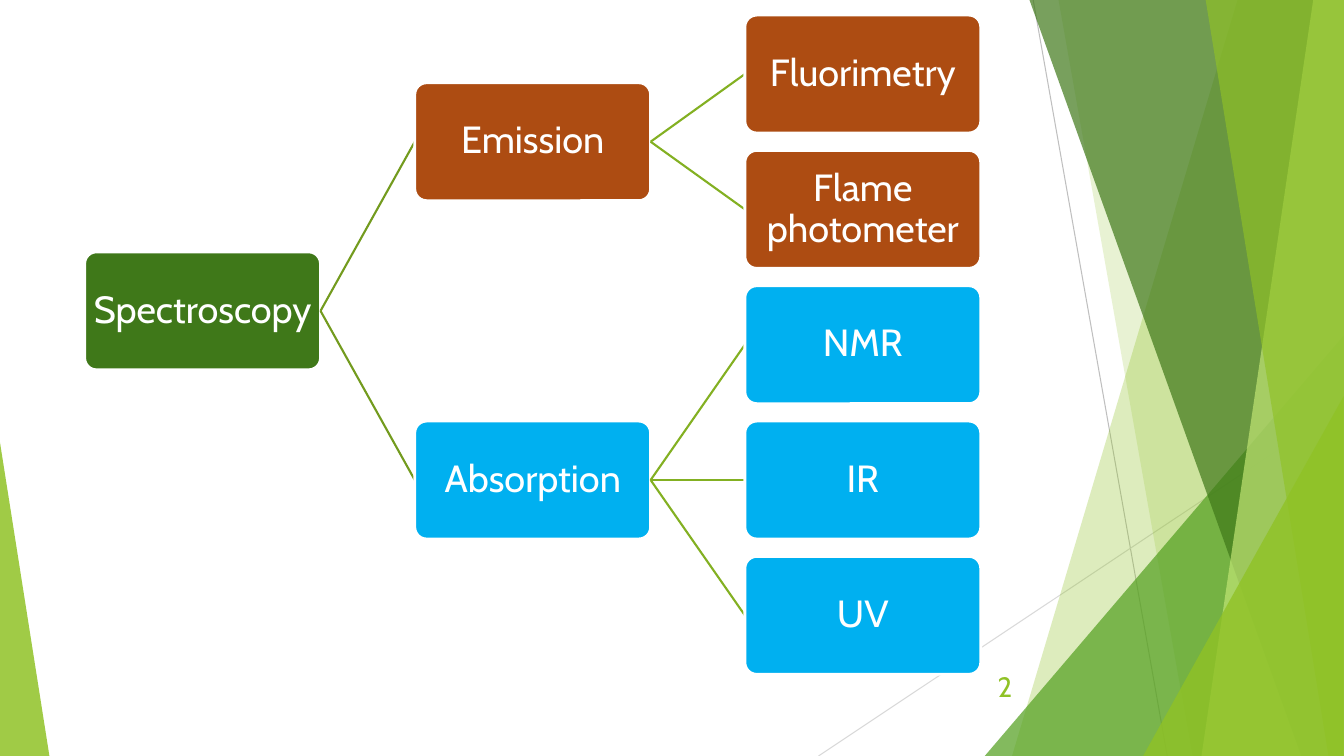
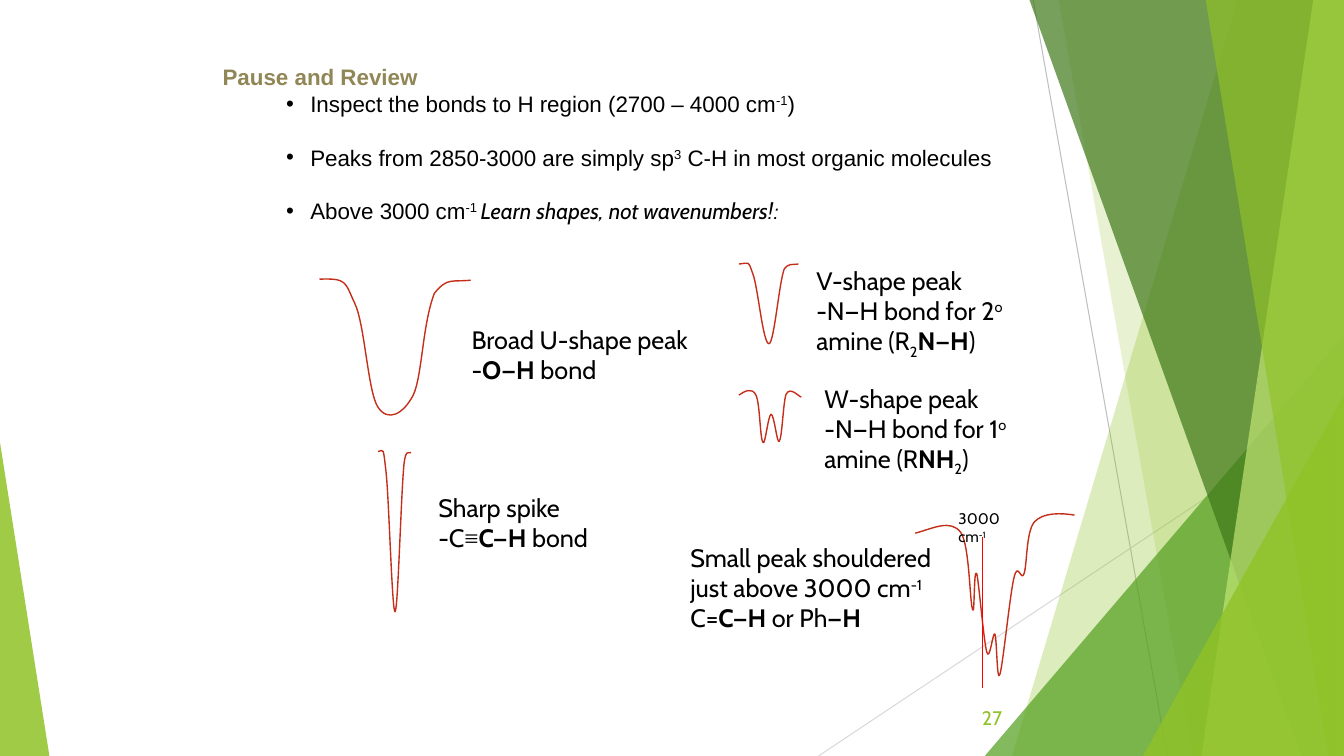
import pptx
import pptx.dml.color
import pptx.enum.shapes
import pptx.enum.text
import pptx.oxml.ns
import pptx.util
from lxml import etree

PX = 9144  # EMU per px, 100 px to the inch
SLIDE_H = 750
SLIDE_W = SLIDE_H * 16 / 9

GREEN, DARK_GREEN, MID_GREEN, PALE_GREEN = "90C226", "3F7819", "54A021", "C0E474"
RUST, BLUE, WHITE, BLACK, RED = "AD4C12", "00B0F0", "FFFFFF", "000000", "FF0000"
OLIVE, PEAK_RED = "918655", "C42F1A"
BRANCH_COLOURS = ["739B1E", "83B022"]

SHAPES = pptx.enum.shapes.MSO_SHAPE
ALIGN = pptx.enum.text.PP_ALIGN
ANCHOR = pptx.enum.text.MSO_ANCHOR

# Backdrop shared by both slides
HAIRLINES = [((1025, 0), (1158, 750), "BFBFBF"), ((1333, 403), (812, 750), "D9D9D9")]
# bands: x of top left and bottom left corner, both running to the right edge
FACETS = [
    ("band", (1228, 1004), GREEN, 30),
    ("band", (1050, 1183), GREEN, 20),
    ("corner", (977, 333, 356, 417, 1), MID_GREEN, 72),
    ("band", (1021, 1291), DARK_GREEN, 70),
    ("band", (1303, 1192), PALE_GREEN, 70),
    ("band", (1196, 1318), GREEN, 65),
    ("corner", (1134, 393, 199, 357, 1), GREEN, 80),
    ("corner", (0, 439, 49, 311, 0), GREEN, 85),
]

# Slide 1: name, colour, children
METHODS = ("Spectroscopy", DARK_GREEN, [
    ("Emission", RUST, [
        ("Fluorimetry", RUST, []),
        ("Flame photometer", RUST, [])]),
    ("Absorption", BLUE, [
        ("NMR", BLUE, []),
        ("IR", BLUE, []),
        ("UV", BLUE, [])]),
])
NODE_W, NODE_H = 234, 117
FIRST_COLUMN, LAST_COLUMN, COLUMNS = 84, 739, 3
FIRST_ROW, LAST_ROW, ROWS = 15, 552, 5

# Slide 2
SUP, SUB, BOLD = {"base": 30}, {"base": -25}, {"bold": True}
REVIEW_TITLE = "Pause and Review"
REVIEW_POINTS = [
    ["Inspect the bonds to H region (2700 – 4000 cm", ("-1", SUP), ")"],
    ["Peaks from 2850-3000 are simply sp", ("3", SUP), " C-H in most organic molecules"],
    ["Above 3000 cm", ("-1 ", SUP),
     ("Learn shapes, not wavenumbers!", {"font": "Cabin", "italic": True}),
     (":", {"size": 14, "italic": True})],
]
PEAK_LABELS = [
    ((458, 317, 246, 71), 18, [["Broad U-shape peak"], ["-", ("O—H", BOLD), " bond"]]),
    ((800, 258, 258, 101), 18, [
        ["V-shape peak"],
        ["-N—H bond for 2", ("o", SUP), " amine (R", ("2", SUB), ("N—H", BOLD), ")"]]),
    ((425, 483, 173, 71), 18, [
        ["Sharp spike"],
        ["-C", ("≡", {"font": "Times New Roman"}), ("C—H", BOLD), " bond"]]),
    ((808, 375, 258, 101), 18, [
        ["W-shape peak"],
        ["-N—H bond for 1", ("o", SUP), " amine (R", ("NH", BOLD), ("2", SUB), ")"]]),
    ((941, 500, 88, 29), 11, [["3000 cm", ("-1", SUP)]]),
    ((675, 533, 275, 101), 18, [
        ["Small peak shouldered just above 3000 cm", ("-1", SUP),
         " C=", ("C—H", BOLD), " or Ph", ("—H", BOLD)]]),
]
# Each peak: start point, then cubic curves (two controls and an end)
PEAKS = [
    [(317, 277),
     (345, 276), (342, 280), (352, 301), (362, 322), (365, 389), (375, 404),
     (385, 419), (400, 411), (410, 392), (419, 373), (419, 322), (431, 291),
     (444, 275), (448, 280), (467, 278)],
    [(733, 262),
     (744, 261), (742, 258), (747, 272), (752, 285), (757, 342), (763, 341),
     (768, 340), (773, 280), (778, 267), (783, 261), (784, 263), (792, 262)],
    [(375, 448),
     (381, 447), (380, 442), (383, 468), (386, 495), (389, 608), (392, 607),
     (395, 605), (398, 486), (401, 459), (403, 446), (404, 450), (408, 449)],
    [(733, 392),
     (739, 388), (746, 384), (750, 392), (754, 400), (754, 436), (757, 439),
     (759, 443), (762, 412), (765, 411), (768, 411), (771, 441), (773, 438),
     (776, 435), (777, 398), (780, 391), (784, 383), (793, 394), (795, 394)],
    [(908, 529),
     (926, 524), (943, 515), (953, 528), (962, 540), (962, 598), (965, 605),
     (967, 612), (966, 562), (969, 569), (971, 576), (976, 637), (979, 647),
     (982, 657), (985, 626), (987, 629), (989, 633), (989, 679), (992, 669),
     (995, 660), (1002, 589), (1006, 573), (1010, 556), (1013, 578), (1016, 569),
     (1019, 560), (1018, 528), (1026, 518), (1035, 508), (1053, 509), (1066, 511)],
]
MARKER = ((975, 683), (975, 533))


def emu(*lengths):
    return [pptx.util.Emu(round(length * PX)) for length in lengths]


def colour(value):
    return pptx.dml.color.RGBColor.from_string(value)


def paint(shape, fill=None, opacity=100, line=None, width=1):
    """Set fill and outline, without a shadow."""
    shape.shadow.inherit = False
    if fill:
        shape.fill.solid()
        shape.fill.fore_color.rgb = colour(fill)
        if opacity < 100:
            tint = shape._element.spPr.find(".//" + pptx.oxml.ns.qn("a:srgbClr"))
            alpha = etree.SubElement(tint, pptx.oxml.ns.qn("a:alpha"))
            alpha.set("val", str(opacity * 1000))
    else:
        shape.fill.background()
    if line:
        shape.line.color.rgb = colour(line)
        shape.line.width = pptx.util.Pt(width)
    else:
        shape.line.fill.background()


def draw_outline(slide, points, close, **look):
    points = [emu(*point) for point in points]
    builder = slide.shapes.build_freeform(*points[0], scale=1.0)
    builder.add_line_segments(points[1:], close=close)
    outline = builder.convert_to_shape()
    paint(outline, **look)
    return outline


def draw_curve(slide, points, **look):
    """Turn each three segments of an outline into one cubic curve."""
    outline = draw_outline(slide, points, False, **look)
    segments = list(outline._element.iter(pptx.oxml.ns.qn("a:lnTo")))
    for i in range(0, len(segments), 3):
        curve = etree.Element(pptx.oxml.ns.qn("a:cubicBezTo"))
        segments[i].addprevious(curve)
        for segment in segments[i:i + 3]:
            curve.append(segment[0])
            segment.getparent().remove(segment)


def draw_line(slide, start, end, line, width):
    connector = slide.shapes.add_connector(
        pptx.enum.shapes.MSO_CONNECTOR.STRAIGHT, *emu(*start, *end))
    connector.line.color.rgb = colour(line)
    connector.line.width = pptx.util.Pt(width)
    etree.SubElement(connector._element.spPr, pptx.oxml.ns.qn("a:effectLst"))
    return connector


def write(paragraph, runs, font="Cabin", size=18, ink=BLACK, bold=False,
          align=ALIGN.LEFT, spacing=None, before=0, indent=None, bullet=None):
    """Fill a paragraph; a run is a text or a (text, changed format) pair."""
    properties = paragraph._p.get_or_add_pPr()
    if indent:
        for key, length in zip(("marL", "indent"), emu(*indent)):
            properties.set(key, str(length))
    if bullet:
        etree.SubElement(properties, pptx.oxml.ns.qn("a:buFont")).set("typeface", font)
        etree.SubElement(properties, pptx.oxml.ns.qn("a:buChar")).set("char", bullet)
    paragraph.alignment = align
    paragraph.line_spacing = spacing
    paragraph.space_before = pptx.util.Pt(before)
    for item in runs:
        words, change = (item, {}) if isinstance(item, str) else item
        run = paragraph.add_run()
        run.text = words
        run.font.name = change.get("font", font)
        run.font.size = pptx.util.Pt(change.get("size", size))
        run.font.bold = change.get("bold", bold)
        run.font.italic = change.get("italic", False)
        run.font.color.rgb = colour(ink)
        if "base" in change:
            run._r.get_or_add_rPr().set("baseline", str(change["base"] * 1000))


def add_text(slide, place, paragraphs, anchor=ANCHOR.TOP, **style):
    """Text box; a paragraph is a run list or a (run list, own style) pair."""
    frame = slide.shapes.add_textbox(*emu(*place)).text_frame
    frame.word_wrap = True
    frame.vertical_anchor = anchor
    for number, item in enumerate(paragraphs):
        runs, own = item if isinstance(item, tuple) else (item, {})
        paragraph = frame.add_paragraph() if number else frame.paragraphs[0]
        write(paragraph, runs, **{**style, **own})


def start_slide(deck):
    slide = deck.slides.add_slide(deck.slide_layouts[6])
    for start, end, line in HAIRLINES:
        draw_line(slide, start, end, line, 0.75)
    for kind, place, fill, opacity in FACETS:
        if kind == "band":
            top, bottom = place
            corners = [(top, -1), (SLIDE_W, -1), (SLIDE_W, SLIDE_H), (bottom, SLIDE_H)]
            draw_outline(slide, corners, True, fill=fill, opacity=opacity)
        else:
            *box, apex = place
            corner = slide.shapes.add_shape(SHAPES.ISOSCELES_TRIANGLE, *emu(*box))
            corner.adjustments[0] = apex
            paint(corner, fill=fill, opacity=opacity)
    return slide


def add_number(slide, number, left, top, size):
    add_text(slide, (left, top, 75, 40), [[number]], anchor=ANCHOR.MIDDLE,
             size=size, ink=GREEN, align=ALIGN.RIGHT)


def leaf_count(node):
    return sum(map(leaf_count, node[2])) or 1


def node_top(node, row):
    """Leaves sit on rows; a parent sits midway among its children."""
    if not node[2]:
        return FIRST_ROW + row * (LAST_ROW - FIRST_ROW) / (ROWS - 1)
    tops = []
    for child in node[2]:
        tops.append(node_top(child, row))
        row += leaf_count(child)
    return sum(tops) / len(tops)


def draw_tree(slide, node, level=0, row=0, parent=None):
    name, fill, children = node
    left = FIRST_COLUMN + level * (LAST_COLUMN - FIRST_COLUMN) / (COLUMNS - 1)
    top = node_top(node, row)
    if parent:  # the branch lies beneath the child's white outline
        branch = draw_line(slide, (0, 0), (left, top), BRANCH_COLOURS[level - 1], 1.5)
        branch.begin_connect(parent, 3)
    box = slide.shapes.add_shape(SHAPES.ROUNDED_RECTANGLE, *emu(left, top, NODE_W, NODE_H))
    box.adjustments[0] = 0.1
    paint(box, fill=fill, line=WHITE, width=2)
    frame = box.text_frame
    frame.word_wrap = True
    frame.vertical_anchor = ANCHOR.MIDDLE
    frame.margin_left, frame.margin_top, frame.margin_right, frame.margin_bottom = emu(2, 2, 2, 2)
    write(frame.paragraphs[0], [name], size=27, ink=WHITE, align=ALIGN.CENTER, spacing=0.9)
    if parent:
        branch.end_connect(box, 1)
    for child in children:
        draw_tree(slide, child, level + 1, row, box)
        row += leaf_count(child)


def main():
    deck = pptx.Presentation()
    deck.slide_width, deck.slide_height = emu(SLIDE_W, SLIDE_H)

    # Slide 1: tree of methods
    slide = start_slide(deck)
    draw_tree(slide, METHODS)
    add_number(slide, "2", 939, 661, 20)

    # Slide 2: peak shapes
    slide = start_slide(deck)
    heading = ([REVIEW_TITLE], {"ink": OLIVE, "bold": True, "indent": (44, 0)})
    points = [(runs, {"indent": (131, -24), "bullet": "•", "before": 19 if i else 0})
              for i, runs in enumerate(REVIEW_POINTS)]
    add_text(slide, (167, 58, 925, 172), [heading] + points, font="Arial", size=16)
    for path in PEAKS:
        draw_curve(slide, path, line=PEAK_RED)
    draw_line(slide, *MARKER, RED, 1)
    for place, size, paragraphs in PEAK_LABELS:
        add_text(slide, place, paragraphs, size=size)
    add_number(slide, "27", 929, 692, 14)

    deck.save("out.pptx")


if __name__ == "__main__":
    main()
